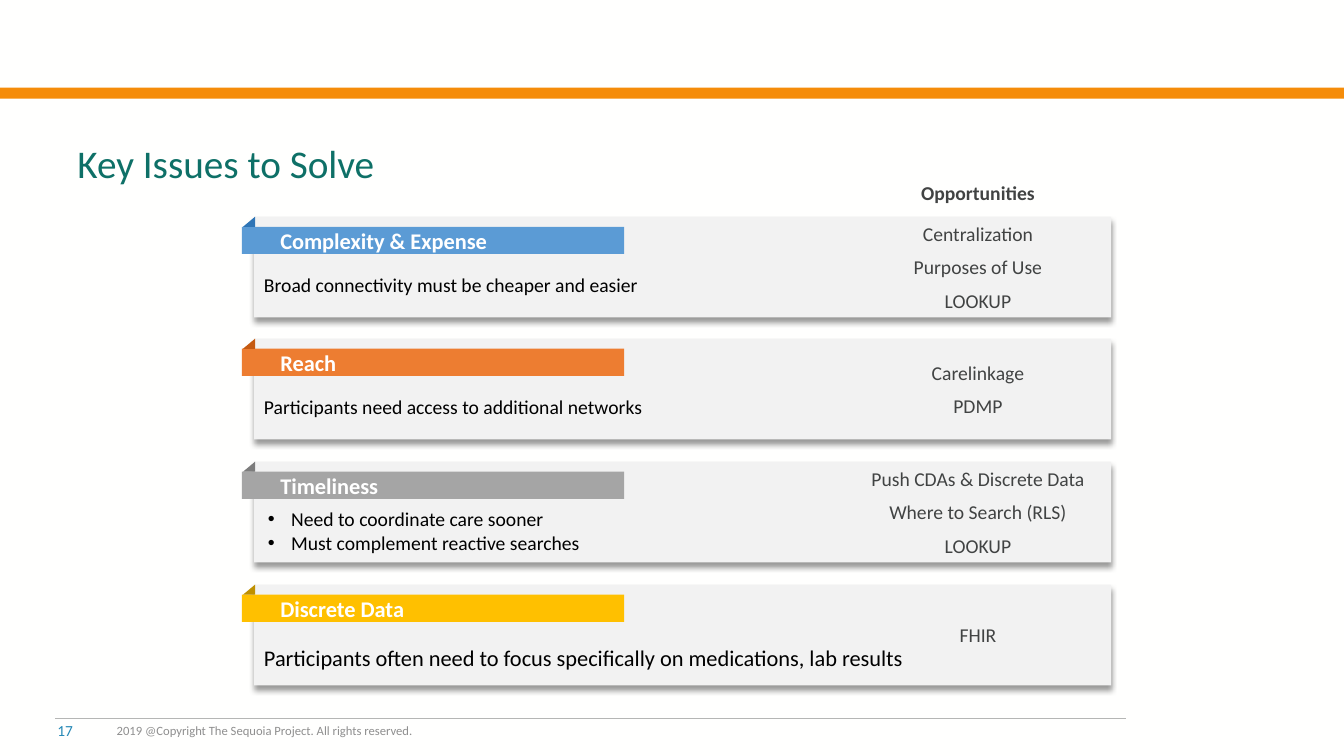
from lxml import etree
from pptx import Presentation
from pptx import util as u
from pptx.dml.color import RGBColor
from pptx.enum import shapes, text
from pptx.oxml import ns

PX = 9144
FONT = "Calibri"
COLORS = {
    "page": "FFFFFE", "band": "F58C09", "rule": "B5B6B5", "title": "0E7067",
    "copyright": "8F8F8F", "number": "2588B6", "panel": "F2F2F2",
    "body": "000000", "opportunity": "414343", "heading": "FFFFFF",
    "blue": "5B9BD5", "blue_fold": "2E75B6",
    "orange": "ED7D31", "orange_fold": "C55A11",
    "gray": "A5A5A5", "gray_fold": "7C7C7C",
    "gold": "FFC000", "gold_fold": "BF9000",
}
ISSUES = [
    ("Complexity & Expense", "blue",
     ["Broad connectivity must be cheaper and easier"], 14,
     ["Centralization", "Purposes of Use", "LOOKUP"]),
    ("Reach", "orange",
     ["Participants need access to additional networks"], 14,
     ["Carelinkage", "PDMP"]),
    ("Timeliness", "gray",
     ["Need to coordinate care sooner", "Must complement reactive searches"], 14,
     ["Push CDAs & Discrete Data", "Where to Search (RLS)", "LOOKUP"]),
    ("Discrete Data", "gold",
     ["Participants often need to focus specifically on medications, lab results"], 16,
     ["FHIR"]),
]


def rgb(name):
    return RGBColor.from_string(COLORS[name])


def emu(box):
    return [u.Emu(length * PX) for length in box]


def write(holder, lines, size, color, insets=(10, 5, 10, 5), bold=False,
          anchor=text.MSO_ANCHOR.TOP, align=text.PP_ALIGN.LEFT, after=0,
          bullets=False, wrap=True):
    frame = holder.text_frame
    frame.word_wrap = wrap
    frame.vertical_anchor = anchor
    (frame.margin_left, frame.margin_top,
     frame.margin_right, frame.margin_bottom) = emu(insets)
    frame.text = "\n".join(lines)
    for paragraph in frame.paragraphs:
        paragraph.alignment = align
        paragraph.space_after = u.Pt(after)
        if bullets:
            props = paragraph._p.get_or_add_pPr()
            props.set("marL", str(23 * PX))
            props.set("indent", str(-23 * PX))
            etree.SubElement(props, ns.qn("a:buFont"), typeface="Arial")
            etree.SubElement(props, ns.qn("a:buChar"), char="•")
        for run in paragraph.runs:
            run.font.name = FONT
            run.font.size = u.Pt(size)
            run.font.bold = bold
            run.font.color.rgb = rgb(color)


def add_text(slide, box, lines, size, color, **style):
    write(slide.shapes.add_textbox(*emu(box)), lines, size, color, **style)


def add_block(slide, box, color, kind=shapes.MSO_SHAPE.RECTANGLE):
    block = slide.shapes.add_shape(kind, *emu(box))
    block.shadow.inherit = False
    block.fill.solid()
    block.fill.fore_color.rgb = rgb(color)
    block.line.fill.background()
    return block


def cast_shadow(block):
    effects = block._element.spPr.find(ns.qn("a:effectLst"))
    shadow = etree.SubElement(
        effects, ns.qn("a:outerShdw"), blurRad=str(u.Pt(4)), dist=str(u.Pt(3)),
        dir="5400000", algn="t", rotWithShape="0")
    shade = etree.SubElement(shadow, ns.qn("a:srgbClr"), val=COLORS["body"])
    etree.SubElement(shade, ns.qn("a:alpha"), val="40000")


def draw_header(slide, left, top, width):
    add_block(slide, (left, top, width, 11), "band")
    add_text(slide, (left + 67, top - 6, 1200, 109), ["Key Issues to Solve"],
             28, "title", anchor=text.MSO_ANCHOR.BOTTOM)


def draw_footer(slide, left, top, width):
    rule = slide.shapes.add_connector(
        shapes.MSO_CONNECTOR.STRAIGHT, *emu((left, top, left + width, top)))
    rule.line.color.rgb = rgb("rule")
    rule.line.width = u.Pt(0.5)
    etree.SubElement(rule._element.spPr, ns.qn("a:effectLst"))
    add_text(slide, (left + 51, top - 8, 443, 40),
             ["2019 @Copyright The Sequoia Project. All rights reserved."],
             9, "copyright", anchor=text.MSO_ANCHOR.MIDDLE)
    add_text(slide, (left - 8, top - 2, 311, 40), ["17"], 11, "number")


def draw_issue(slide, left, top, width, height, issue):
    heading, color, points, size, opportunities = issue
    panel = add_block(slide, (left, top, width, height), "panel")
    cast_shadow(panel)
    if len(points) == 1:
        first_line = 32 + round(size * 1.22 * 100 / 72)
        write(panel, points, size, "body", insets=(10, first_line, 10, 5))
    ribbon = add_block(slide, (left - 12, top + 10, 379, 27), color)
    write(ribbon, [heading], 16, "heading", insets=(38, 5, 10, 5), bold=True,
          anchor=text.MSO_ANCHOR.MIDDLE)
    fold = add_block(slide, (left - 10, top - 1, 10, 12), color + "_fold",
                     shapes.MSO_SHAPE.ISOSCELES_TRIANGLE)
    fold.adjustments[0] = 0
    fold.rotation = 270
    if len(points) > 1:
        add_text(slide, (left + 4, top + 40, 334, 57), points, size, "body",
                 bullets=True, wrap=False)
    add_text(slide, (left + 580, top, 276, height), opportunities, 14,
             "opportunity", insets=(10, 0, 10, 0), after=7,
             anchor=text.MSO_ANCHOR.MIDDLE, align=text.PP_ALIGN.CENTER)


def draw_issues(slide, left, top, width, height):
    panel_height = 100
    travel = height - panel_height
    add_text(slide, (left + 580, top - 40, 276, 29), ["Opportunities"], 14,
             "opportunity", bold=True, after=7, align=text.PP_ALIGN.CENTER)
    for index, issue in enumerate(ISSUES):
        offset = index * travel // (len(ISSUES) - 1)
        draw_issue(slide, left, top + offset, width, panel_height, issue)


def main():
    deck = Presentation()
    deck.slide_width, deck.slide_height = emu((1333, 750))
    slide = deck.slides.add_slide(deck.slide_layouts[6])
    slide.background.fill.solid()
    slide.background.fill.fore_color.rgb = rgb("page")
    draw_header(slide, 0, 87, 1333)
    draw_footer(slide, 55, 713, 1062)
    draw_issues(slide, 252, 215, 850, 465)
    deck.save("out.pptx")


if __name__ == "__main__":
    main()
